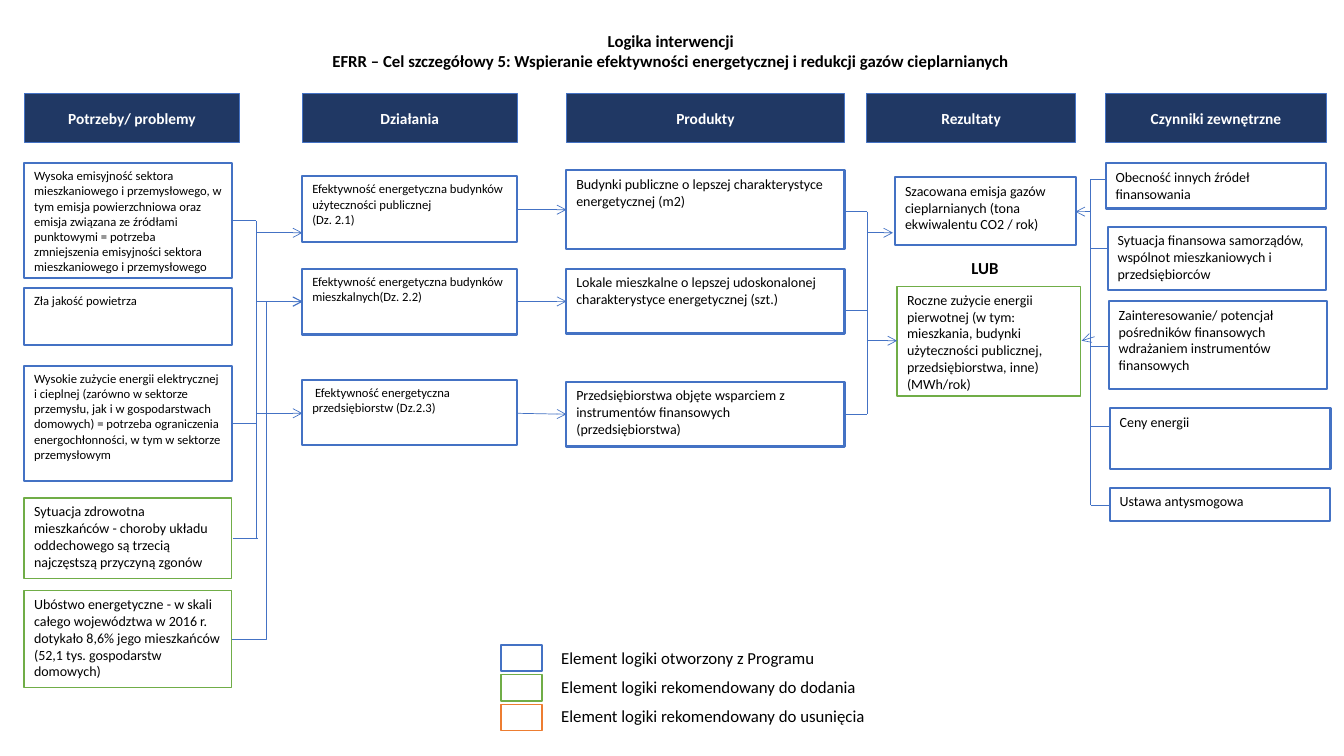
from pptx import Presentation
from pptx.dml.color import RGBColor
from pptx.enum.shapes import MSO_CONNECTOR as Connector, MSO_SHAPE as Shape
from pptx.enum.text import MSO_ANCHOR as Anchor, MSO_AUTO_SIZE as AutoSize, PP_ALIGN as Align
from pptx.oxml.ns import qn
from pptx.util import Pt
from lxml.etree import SubElement

COLORS = {"navy": "203864", "blue": "4472C4", "green": "70AD47",
          "orange": "ED7D31", "white": "FFFFFF", "black": "000000"}
BORDERS = {"blue": 1.5, "green": 1, "orange": 1}


def rgb(name):
    return RGBColor.from_string(COLORS[name])


class LogicDiagram:
    font = "Calibri"

    def __init__(self, slide):
        self.slide = slide

    def set_text(self, frame, text, size, color="black", bold=False,
                 align=Align.LEFT, anchor=Anchor.TOP, before=0):
        frame.word_wrap = True
        frame.vertical_anchor = anchor
        frame.text = text
        for paragraph in frame.paragraphs:
            paragraph.alignment = align
            paragraph.line_spacing = 1.0
            paragraph.space_before = Pt(before)
            for run in paragraph.runs:
                run.font.name = self.font
                run.font.size = Pt(size)
                run.font.bold = bold
                run.font.color.rgb = rgb(color)

    def title(self, text, x, y, w, h):
        heading = self.slide.shapes.title
        heading.left, heading.top, heading.width, heading.height = map(Pt, (x, y, w, h))
        self.set_text(heading.text_frame, text, 12, bold=True, align=Align.CENTER)
        heading.text_frame.auto_size = AutoSize.SHAPE_TO_FIT_TEXT

    def rect(self, x, y, w, h, fill="white", border="blue", weight=None):
        rect = self.slide.shapes.add_shape(Shape.RECTANGLE, *map(Pt, (x, y, w, h)))
        rect.shadow.inherit = False
        rect.fill.solid()
        rect.fill.fore_color.rgb = rgb(fill)
        rect.line.color.rgb = rgb(border)
        rect.line.width = Pt(weight or BORDERS[border])
        return rect

    def header(self, text, x, w):
        rect = self.rect(x, 67, w, 34.6, "navy", weight=0.5)
        self.set_text(rect.text_frame, text, 11, "white", True, Align.CENTER, Anchor.MIDDLE)

    def box(self, text, x, y, w, h, size=10, border="blue"):
        self.set_text(self.rect(x, y, w, h, border=border).text_frame, text, size)

    def label(self, text, x, y, w, h, **style):
        label = self.slide.shapes.add_textbox(*map(Pt, (x, y, w, h)))
        self.set_text(label.text_frame, text, 12, **style)
        label.text_frame.auto_size = AutoSize.SHAPE_TO_FIT_TEXT

    def line(self, x1, y1, x2, y2, arrow=False, kind=Connector.STRAIGHT):
        line = self.slide.shapes.add_connector(kind, *map(Pt, (x1, y1, x2, y2)))
        line.line.color.rgb = rgb("blue")
        line.line.width = Pt(0.5)
        properties = line._element.spPr
        if arrow:
            SubElement(properties.find(qn("a:ln")), qn("a:tailEnd"), type="arrow")
        SubElement(properties, qn("a:effectLst"))


def main():
    prs = Presentation()
    prs.slide_width, prs.slide_height = Pt(960), Pt(540)
    diagram = LogicDiagram(prs.slides.add_slide(prs.slide_layouts[5]))

    diagram.title("Logika interwencji\nEFRR – Cel szczegółowy 5: Wspieranie efektywności "
                  "energetycznej i redukcji gazów cieplarnianych", 20.2, 18, 918, 36)

    # Energy poverty leads to housing efficiency
    diagram.line(164.9, 456.5, 216, 215.3, arrow=True, kind=Connector.ELBOW)

    # Column headers
    for text, x, w in [("Potrzeby/ problemy", 17.3, 154.1), ("Działania", 216, 153.4),
                       ("Produkty", 404.6, 198.7), ("Rezultaty", 619.2, 149),
                       ("Czynniki zewnętrzne", 789.8, 157.7)]:
        diagram.header(text, x, w)

    # Needs and problems
    for text, y, h, size, border in [
        ("Wysoka emisyjność sektora mieszkaniowego i przemysłowego, w tym emisja "
         "powierzchniowa oraz emisja związana ze źródłami punktowymi = potrzeba "
         "zmniejszenia emisyjności sektora mieszkaniowego i przemysłowego",
         116.6, 82.1, 9, "blue"),
        ("Zła jakość powietrza", 205.9, 40.3, 9, "blue"),
        ("Wysokie zużycie energii elektrycznej i cieplnej (zarówno w sektorze przemysłu, "
         "jak i w gospodarstwach domowych) = potrzeba ograniczenia energochłonności, "
         "w tym w sektorze przemysłowym", 261.4, 82.1, 9, "blue"),
        ("Sytuacja zdrowotna mieszkańców - choroby układu oddechowego są trzecią "
         "najczęstszą przyczyną zgonów", 355.7, 57.6, 10, "green"),
        ("Ubóstwo energetyczne - w skali całego województwa w 2016 r. dotykało 8,6% jego "
         "mieszkańców (52,1 tys. gospodarstw domowych)", 421.9, 69.1, 10, "green"),
    ]:
        diagram.box(text, 17.3, y, 148.3, h, size, border)

    # Actions
    for text, y in [
        ("Efektywność energetyczna budynków użyteczności publicznej\n(Dz. 2.1)", 126),
        ("Efektywność energetyczna budynków mieszkalnych(Dz. 2.2)", 192.2),
        (" Efektywność energetyczna przedsiębiorstw (Dz.2.3)", 271.4),
    ]:
        diagram.box(text, 216, y, 153.4, 46.8, size=9)

    # Products
    for text, y, h in [
        ("Budynki publiczne o lepszej charakterystyce energetycznej (m2)", 121.7, 56.2),
        ("Lokale mieszkalne o lepszej udoskonalonej charakterystyce energetycznej (szt.)",
         192.2, 46.1),
        ("Przedsiębiorstwa objęte wsparciem z instrumentów finansowych (przedsiębiorstwa)",
         272.9, 46.1),
    ]:
        diagram.box(text, 404.6, y, 198.7, h)

    # Results
    diagram.box("Szacowana emisja gazów cieplarnianych (tona ekwiwalentu CO2 / rok)",
                639.4, 126.7, 128.9, 48.2)
    diagram.label("LUB", 664.6, 180.7, 77.8, 21.6, bold=True, align=Align.CENTER)
    diagram.box("Roczne zużycie energii pierwotnej (w tym: mieszkania, budynki użyteczności "
                "publicznej, przedsiębiorstwa, inne) (MWh/rok)",
                640.8, 204.5, 131, 78.5, border="green")

    # External factors
    for text, x, y, w, h in [
        ("Obecność innych źródeł finansowania", 789.8, 116.6, 157.7, 32.4),
        ("Sytuacja finansowa samorządów, wspólnot mieszkaniowych i przedsiębiorców",
         791.3, 162, 156.2, 45.4),
        ("Zainteresowanie/ potencjał pośredników finansowych wdrażaniem instrumentów "
         "finansowych", 792, 215.3, 156.2, 62.6),
        ("Ceny energii", 792.7, 291.6, 157.7, 43.2),
        ("Ustawa antysmogowa", 792.7, 348.5, 157, 23.8),
    ]:
        diagram.box(text, x, y, w, h)

    # Needs to actions
    needs_bus = 182.9
    diagram.line(needs_bus, 157.7, needs_bus, 384.5)
    for x, y, end in [(164.9, 157.7, needs_bus), (164.9, 302.4, needs_bus),
                      (166.3, 384.5, 184.3)]:
        diagram.line(x, y, end, y)
    for y in (166.3, 215.6, 295.2):
        diagram.line(needs_bus, y, 216, y, arrow=True)

    # Actions to products
    for y, end in [(149.8, 149.8), (215.3, 215.3), (295.2, 295.9)]:
        diagram.line(369.4, y, 404.6, end, arrow=True)

    # Products to results
    products_bus = 619.2
    diagram.line(products_bus, 151.2, products_bus, 295.9)
    for x, y in [(603.4, 151.2), (602.6, 221.8), (603.4, 295.9)]:
        diagram.line(x, y, products_bus, y)
    for y, end in [(166.3, 637.9), (243.4, 640.8)]:
        diagram.line(products_bus, y, end, y, arrow=True)

    # External factors to results
    factors_bus = 779
    diagram.line(factors_bus, 128.2, factors_bus, 360.7)
    for y, end in [(128.2, 789.1), (177.1, 792), (247.7, 791.3), (304.6, 792), (360.7, 792)]:
        diagram.line(factors_bus, y, end, y)
    diagram.line(factors_bus, 151.2, 768.2, 151.2, arrow=True)
    diagram.line(781.9, 240.5, 772.6, 243.4, arrow=True)

    # Legend
    for row, border in enumerate(BORDERS):
        diagram.rect(357.8, 460.8 + 21.2 * row, 29.5, 18.7, border=border)
    diagram.label("Element logiki otworzony z Programu\n"
                  "Element logiki rekomendowany do dodania\n"
                  "Element logiki rekomendowany do usunięcia",
                  393.8, 459.4, 288.7, 63.4, before=6)

    prs.save("out.pptx")


if __name__ == "__main__":
    main()
